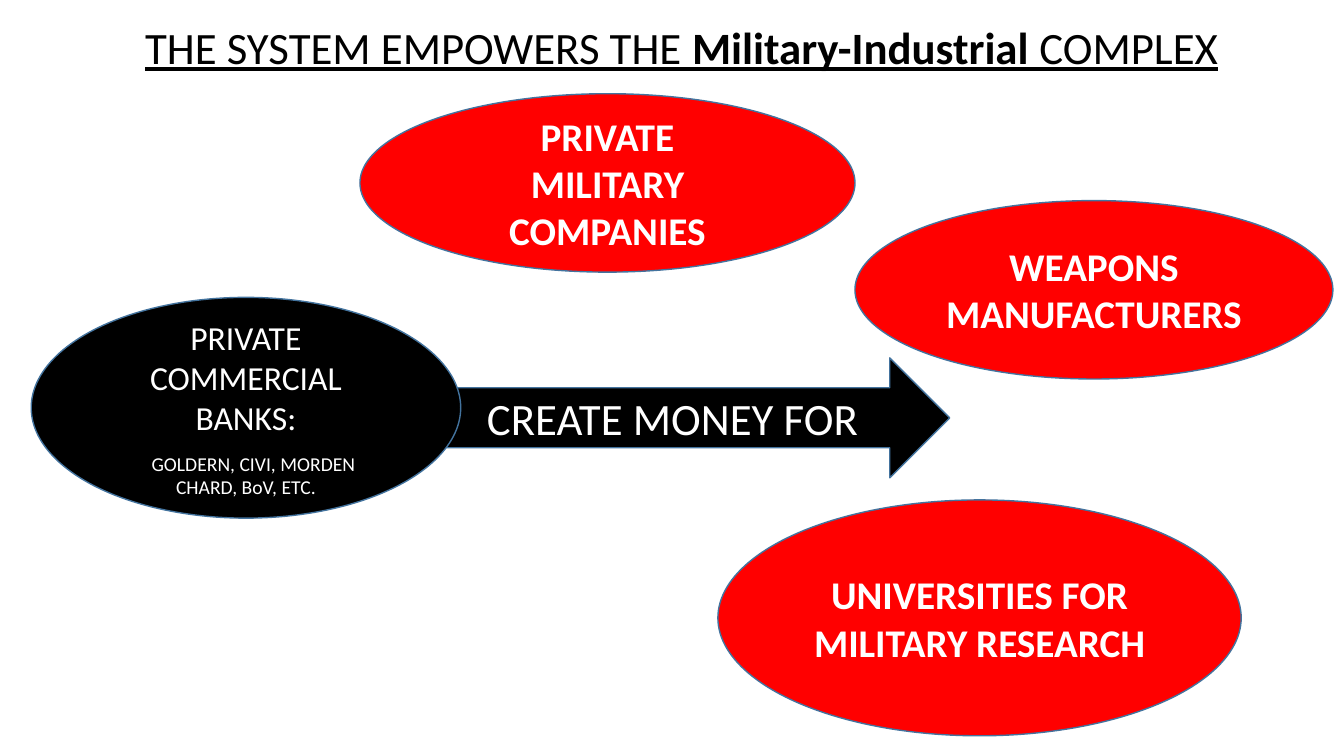
from dataclasses import dataclass

from pptx import Presentation
from pptx.dml.color import RGBColor
from pptx.enum.shapes import MSO_SHAPE
from pptx.enum.text import MSO_ANCHOR, MSO_AUTO_SIZE, PP_ALIGN
from pptx.util import Inches, Pt

ELLIPSE = MSO_SHAPE.OVAL
RIGHT_ARROW = MSO_SHAPE.RIGHT_ARROW
MIDDLE = MSO_ANCHOR.MIDDLE
CENTER = PP_ALIGN.CENTER
GROW = MSO_AUTO_SIZE.SHAPE_TO_FIT_TEXT


@dataclass(frozen=True)
class Theme:
    font: str = "Calibri"
    black: RGBColor = RGBColor(0, 0, 0)
    red: RGBColor = RGBColor(255, 0, 0)
    white: RGBColor = RGBColor(255, 255, 255)
    outline: RGBColor = RGBColor(0x43, 0x73, 0x9E)
    outline_width: float = 1
    title: int = 32
    recipient: int = 28
    banks: int = 24
    bank_names: int = 14


class SlideBuilder:
    def __init__(self, slide, theme):
        self.slide = slide
        self.theme = theme

    def add_run(self, paragraph, text, size, color, bold=False, underline=False):
        run = paragraph.add_run()
        run.text = text
        font = run.font
        font.name = self.theme.font
        font.size = Pt(size)
        font.color.rgb = color
        font.bold = bold
        font.underline = underline

    def add_title(self, box, parts):
        """Place an underlined one-line title from (text, bold) parts."""
        title = self.slide.shapes.add_textbox(*map(Inches, box))
        frame = title.text_frame
        frame.word_wrap = False
        frame.auto_size = GROW
        for text, bold in parts:
            self.add_run(frame.paragraphs[0], text, self.theme.title,
                         self.theme.black, bold, underline=True)

    def add_shape(self, preset, box, fill, lines, bold=False):
        """Place a filled shape with one centred paragraph per (text, size)."""
        shape = self.slide.shapes.add_shape(preset, *map(Inches, box))
        shape.shadow.inherit = False
        shape.fill.solid()
        shape.fill.fore_color.rgb = fill
        shape.line.color.rgb = self.theme.outline
        shape.line.width = Pt(self.theme.outline_width)
        frame = shape.text_frame
        frame.word_wrap = True
        frame.vertical_anchor = MIDDLE
        for index, (text, size) in enumerate(lines):
            paragraph = frame.add_paragraph() if index else frame.paragraphs[0]
            paragraph.alignment = CENTER
            self.add_run(paragraph, text, size, self.theme.white, bold)
        return shape

    def add_recipient(self, box, *lines):
        size = self.theme.recipient
        self.add_shape(ELLIPSE, box, self.theme.red,
                       [(line, size) for line in lines], bold=True)

    def add_banks(self, box, heading, names):
        banks = self.add_shape(ELLIPSE, box, self.theme.black,
                               [(heading, self.theme.banks),
                                (names, self.theme.bank_names)])
        names_paragraph = banks.text_frame.paragraphs[1]
        names_paragraph.space_before = Pt(10)
        names_paragraph._p.get_or_add_pPr().set("indent", str(Inches(0.15)))


def main():
    presentation = Presentation()
    presentation.slide_width = Inches(13.33)
    presentation.slide_height = Inches(7.5)
    slide = presentation.slides.add_slide(presentation.slide_layouts[6])
    theme = Theme()
    builder = SlideBuilder(slide, theme)

    builder.add_title((1.34, 0.15, 10.97, 0.64), [
        ("THE SYSTEM EMPOWERS THE ", False),
        ("Military-Industrial", True),
        (" COMPLEX", False),
    ])
    builder.add_recipient((8.48, 1.99, 4.74, 1.77), "WEAPONS", "MANUFACTURERS")
    builder.add_recipient((7.12, 4.96, 5.19, 2.34),
                          "UNIVERSITIES FOR", "MILITARY RESEARCH")
    builder.add_shape(RIGHT_ARROW, (4.22, 3.55, 5.2, 1.19), theme.black,
                      [("CREATE MONEY FOR", theme.title)])
    builder.add_banks((0.31, 2.95, 4.26, 2.19), "PRIVATE COMMERCIAL BANKS:",
                      "GOLDERN, CIVI, MORDEN CHARD, BoV, ETC.")
    builder.add_recipient((3.57, 0.93, 4.91, 1.77),
                          "PRIVATE", "MILITARY COMPANIES")

    presentation.save("out.pptx")


if __name__ == "__main__":
    main()
